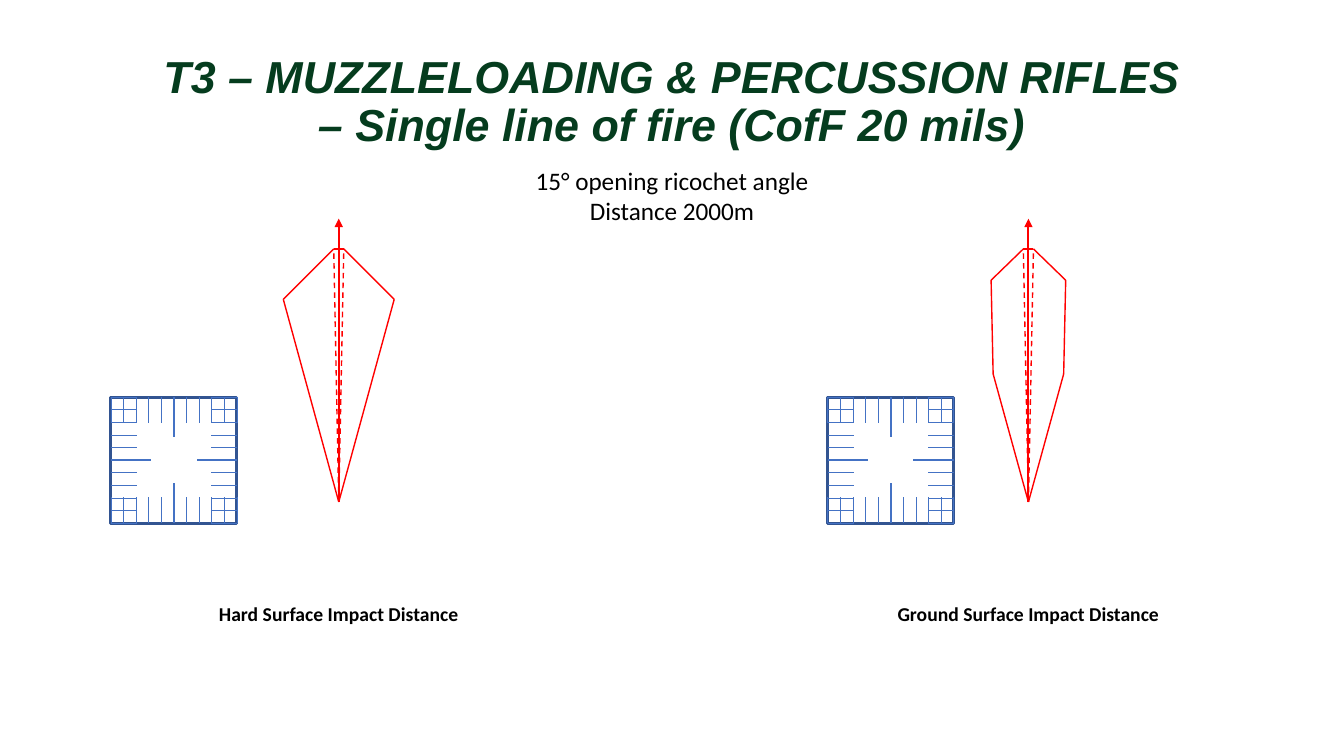
from dataclasses import dataclass
from itertools import pairwise

from lxml import etree
from pptx import Presentation
from pptx import util as u
from pptx.dml.color import RGBColor
from pptx.enum import dml, shapes, text
from pptx.oxml import ns

DARK_GREEN = RGBColor(0x05, 0x3C, 0x1E)
BLACK = RGBColor(0, 0, 0)
RED = RGBColor(0xFF, 0, 0)
BLUE = RGBColor(0x44, 0x72, 0xC4)
DARK_BLUE = RGBColor(0x32, 0x54, 0x91)

Point = tuple[float, float]

GRID_SIDE = 1.25
GRID_TOP = 3.94
GRID_STEPS = 10
SHORT_TICK = 0.26
LONG_TICK = 0.4
MUZZLE_Y = 4.98
FAR_Y = 2.47
ARROW_Y = 2.17
FAR_HALF_WIDTH = 0.05


@dataclass(frozen=True)
class Label:
    left: float
    top: float
    width: float
    height: float
    lines: tuple[str, ...]
    font: dict
    paragraph: dict
    anchor: text.MSO_ANCHOR = text.MSO_ANCHOR.TOP


@dataclass(frozen=True)
class DangerArea:
    grid_left: float
    muzzle_x: float
    flank: tuple[Point, ...]  # half width and height of each corner, far to near


CAPTION_FONT = {"name": "Calibri", "size": u.Pt(14), "bold": True}
CENTRED = {"alignment": text.PP_ALIGN.CENTER}

LABELS = (
    Label(1.47, 5.92, 3.78, 0.34, ("Hard Surface Impact Distance",), CAPTION_FONT, CENTRED),
    Label(8.31, 5.92, 3.78, 0.34, ("Ground Surface Impact Distance",), CAPTION_FONT, CENTRED),
    Label(0, 0.43, 13.33, 1.18,
          ("T3 – MUZZLELOADING & PERCUSSION RIFLES", "– Single line of fire (CofF 20 mils)"),
          {"name": "Arial", "size": u.Pt(32), "bold": True, "italic": True, "color": DARK_GREEN},
          CENTRED | {"line_spacing": 0.9}, text.MSO_ANCHOR.MIDDLE),
    Label(4.62, 1.59, 4.09, 0.71, ("15° opening ricochet angle", "Distance 2000m"),
          {"name": "Calibri", "size": u.Pt(18)}, CENTRED),
)

AREAS = (
    DangerArea(8.21, 10.2, ((0.37, 2.78), (0.35, 3.71))),
    DangerArea(1.1, 3.36, ((0.55, 2.97),)),
)


def add_label(page, label: Label) -> None:
    box = page.shapes.add_textbox(*map(u.Inches, (label.left, label.top, label.width, label.height)))
    frame = box.text_frame
    frame.word_wrap = True
    frame.vertical_anchor = label.anchor
    for index, line in enumerate(label.lines):
        para = frame.add_paragraph() if index else frame.paragraphs[0]
        for name, value in label.paragraph.items():
            setattr(para, name, value)
        span = para.add_run()
        span.text = line
        span.font.color.rgb = BLACK
        for name, value in label.font.items():
            if name == "color":
                span.font.color.rgb = value
            else:
                setattr(span.font, name, value)


def add_line(group, start: Point, end: Point, color: RGBColor, weight: float,
             dashed: bool = False, arrow: bool = False):
    line = group.shapes.add_connector(
        shapes.MSO_CONNECTOR.STRAIGHT, *map(u.Inches, (*start, *end)))
    line.line.color.rgb = color
    line.line.width = u.Pt(weight)
    if dashed:
        line.line.dash_style = dml.MSO_LINE.DASH
    if arrow:
        etree.SubElement(line.line._get_or_add_ln(), ns.qn("a:tailEnd"), type="triangle")
    etree.SubElement(line._element.spPr, ns.qn("a:effectLst"))
    return line


def add_grid(group, left: float) -> None:
    """Draw a square with ticks pointing inwards from all four sides."""
    square = group.shapes.add_shape(
        shapes.MSO_SHAPE.RECTANGLE, *map(u.Inches, (left, GRID_TOP, GRID_SIDE, GRID_SIDE)))
    square.shadow.inherit = False
    square.fill.background()
    square.line.color.rgb = DARK_BLUE
    square.line.width = u.Pt(2)
    right, bottom = left + GRID_SIDE, GRID_TOP + GRID_SIDE
    for step in range(GRID_STEPS + 1):
        middle = step == GRID_STEPS / 2
        length, weight = (LONG_TICK, 1.75) if middle else (SHORT_TICK, 0.5)
        offset = step * GRID_SIDE / GRID_STEPS
        x, y = left + offset, GRID_TOP + offset
        ticks = (  # in connection site order: top, left, bottom, right
            ((x, GRID_TOP), (x, GRID_TOP + length)),
            ((left, y), (left + length, y)),
            ((x, bottom), (x, bottom - length)),
            ((right, y), (right - length, y)),
        )
        for site, (start, end) in enumerate(ticks):
            tick = add_line(group, start, end, BLUE, weight)
            if middle:
                tick.begin_connect(square, site)


def add_trace(group, area: DangerArea) -> None:
    """Draw the line of fire, the cone of fire and the ricochet outline."""
    x = area.muzzle_x
    muzzle = (x, MUZZLE_Y)
    add_line(group, muzzle, (x, ARROW_Y), RED, 1.5, arrow=True)
    add_line(group, (x + FAR_HALF_WIDTH, FAR_Y), (x - FAR_HALF_WIDTH, FAR_Y), RED, 1)
    for side in (-1, 1):
        far = (x + side * FAR_HALF_WIDTH, FAR_Y)
        add_line(group, muzzle, far, RED, 1, dashed=True)
        corners = [(x + side * half, y) for half, y in area.flank]
        for start, end in pairwise([far, *corners, muzzle]):
            add_line(group, start, end, RED, 1)


def main() -> None:
    deck = Presentation()
    deck.slide_width, deck.slide_height = u.Inches(13.33), u.Inches(7.5)
    page = deck.slides.add_slide(deck.slide_layouts[6])
    for area in AREAS:
        group = page.shapes.add_group_shape()
        add_grid(group, area.grid_left)
        add_trace(group, area)
    for label in LABELS:
        add_label(page, label)
    deck.save("out.pptx")


if __name__ == "__main__":
    main()
